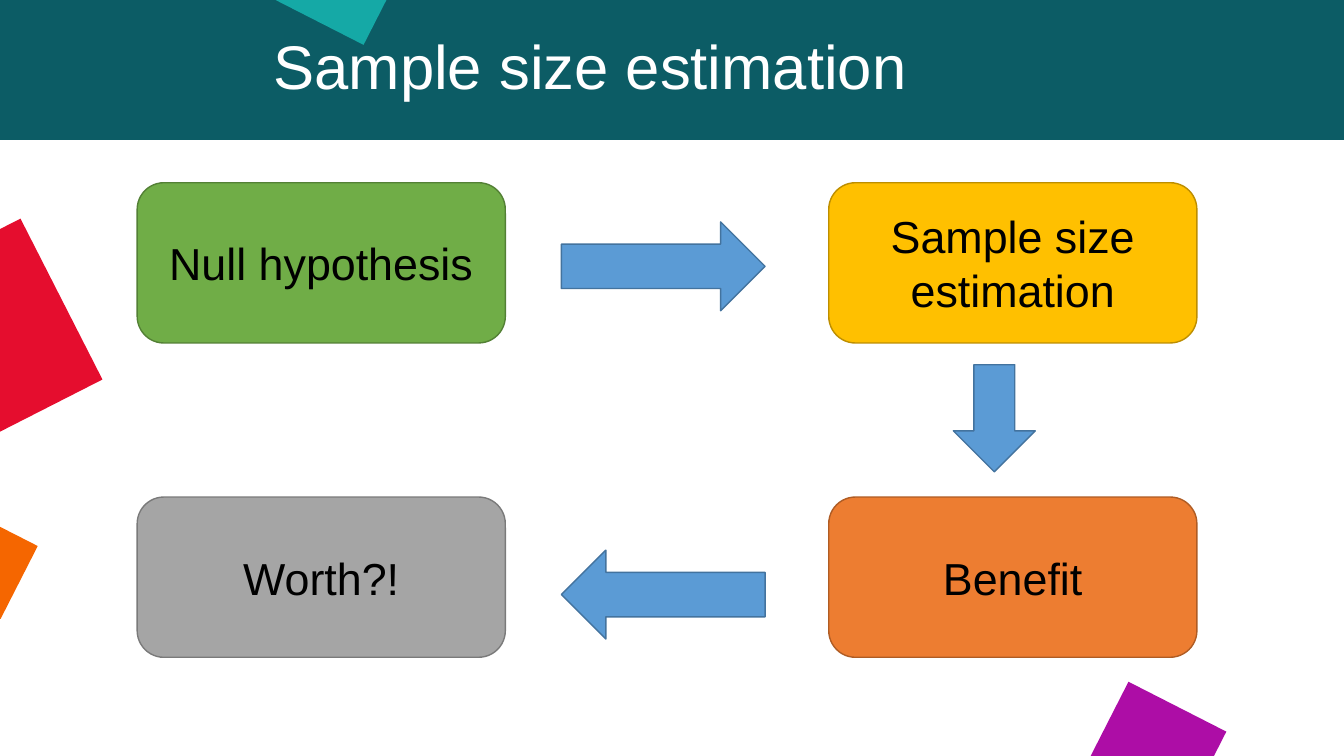
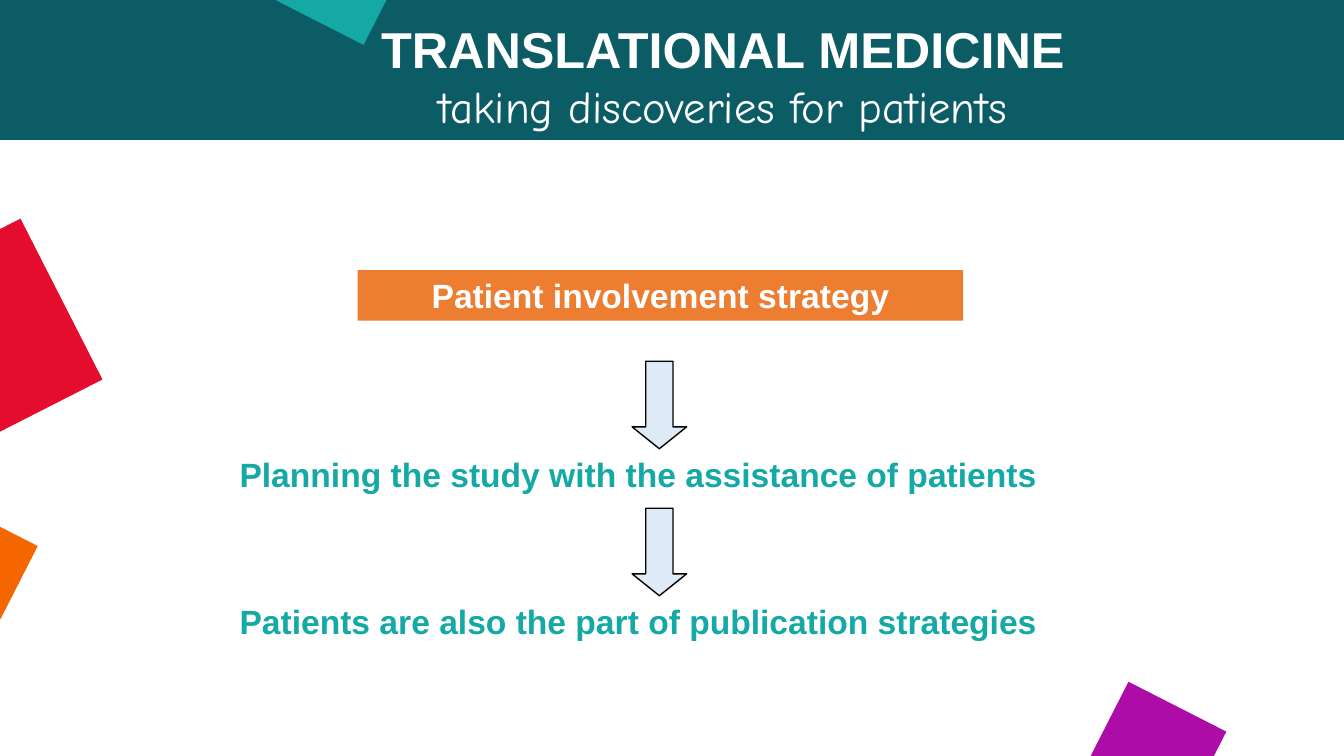
"""Builds two slides on sample size estimation and translational medicine."""
import pptx
import pptx.dml.color
import pptx.enum.shapes
import pptx.enum.text
import pptx.util

Pt = pptx.util.Pt
rgb = pptx.dml.color.RGBColor.from_string
MSO = pptx.enum.shapes.MSO_SHAPE
ANCHOR = pptx.enum.text.MSO_ANCHOR
ALIGN = pptx.enum.text.PP_ALIGN

WHITE, BLACK, TEAL = "FFFFFF", "000000", "15A9A6"
ORANGE, BLUE, BLUE_EDGE = "ED7D31", "5B9BD5", "43739E"


def add_shape(s, kind, box, fill, line=None, rotation=0):
    sp = s.shapes.add_shape(kind, *[Pt(v) for v in box])
    sp.shadow.inherit = False
    sp.rotation = rotation
    sp.fill.solid()
    sp.fill.fore_color.rgb = rgb(fill)
    if line:
        sp.line.color.rgb = rgb(line)
        sp.line.width = Pt(1)
    else:
        sp.line.fill.background()
    return sp


def add_text(sp, text, size=24, color=WHITE, bold=False, font="Arial",
             align=ALIGN.CENTER, anchor=ANCHOR.MIDDLE, spacing=1.0, box=None, new=False):
    if box:
        sp.left, sp.top, sp.width, sp.height = [Pt(v) for v in box]
    tf = sp.text_frame
    tf.word_wrap = True
    tf.auto_size = pptx.enum.text.MSO_AUTO_SIZE.NONE
    tf.vertical_anchor = anchor
    p = tf.add_paragraph() if new else tf.paragraphs[0]
    p.alignment = align
    p.line_spacing = spacing
    r = p.add_run()
    r.text = text
    r.font.name = font
    r.font.size = Pt(size)
    r.font.bold = bold
    r.font.color.rgb = rgb(color)


prs = pptx.Presentation()
prs.slide_width, prs.slide_height = Pt(960), Pt(540)
layout = prs.slide_layouts.get_by_name("Title Only")

s = prs.slides.add_slide(layout)
for box, fill, rotation in [
    ((0, 0, 960, 100), "0C5C65", 0),
    ((-78.5, 178.5, 129.5, 129), "E50D2E", 333),
    ((784, 500.5, 78.5, 78.5), "AD0DA6", 27),
    ((-44, 373, 61, 58.5), "F56600", 27),
    ((209.5, -52.5, 70.5, 72.5), TEAL, 27),
]:
    sp = add_shape(s, MSO.RECTANGLE, box, fill, rotation=rotation)
    layout.shapes.element.append(sp.element)

add_text(s.shapes.title, "Sample size estimation", size=44, anchor=ANCHOR.TOP,
         box=(70.5, 16.5, 702.5, 60.5))

for text, col, row, fill, line in [
    ("Null hypothesis", 0, 0, "70AD47", "538035"),
    ("Sample size estimation", 1, 0, "FFC000", "BD8E00"),
    ("Benefit", 1, 1, ORANGE, "AF5C24"),
    ("Worth?!", 0, 1, "A5A5A5", "7A7A7A"),
]:
    box = (98 + 494 * col, 130.5 + 224.5 * row, 263, 114.5)
    sp = add_shape(s, MSO.ROUNDED_RECTANGLE, box, fill, line)
    add_text(sp, text, size=32, color=BLACK)

for kind, box in [
    (MSO.RIGHT_ARROW, (401, 158.5, 145.5, 63.5)),
    (MSO.DOWN_ARROW, (681, 260.5, 58.5, 76.5)),
    (MSO.LEFT_ARROW, (401, 393, 145.5, 63.5)),
]:
    add_shape(s, kind, box, BLUE, BLUE_EDGE)

s = prs.slides.add_slide(layout)
title = s.shapes.title
add_text(title, "TRANSLATIONAL MEDICINE", size=36, bold=True, anchor=ANCHOR.TOP,
         box=(264, 9.5, 505, 96.5))
add_text(title, "taking discoveries for patients", size=32, font="Comic Neue",
         anchor=ANCHOR.TOP, new=True)

sp = add_shape(s, MSO.RECTANGLE, (255.5, 193, 432.5, 36), ORANGE)
add_text(sp, "Patient involvement strategy", bold=True)

for i, text in enumerate([
    "Planning the study with the assistance of patients",
    "Patients are also the part of publication strategies",
]):
    sp = add_shape(s, MSO.DOWN_ARROW, (451.5, 258 + 105 * i, 39, 62.5), "DEEBF7", BLACK)
    sp.adjustments[1] = 0.4
    sp = s.shapes.add_textbox(Pt(164), Pt(324 + 105 * i), Pt(614), Pt(39))
    add_text(sp, text, color=TEAL, bold=True, align=ALIGN.LEFT, anchor=ANCHOR.TOP, spacing=0.9)

prs.save("out.pptx")
